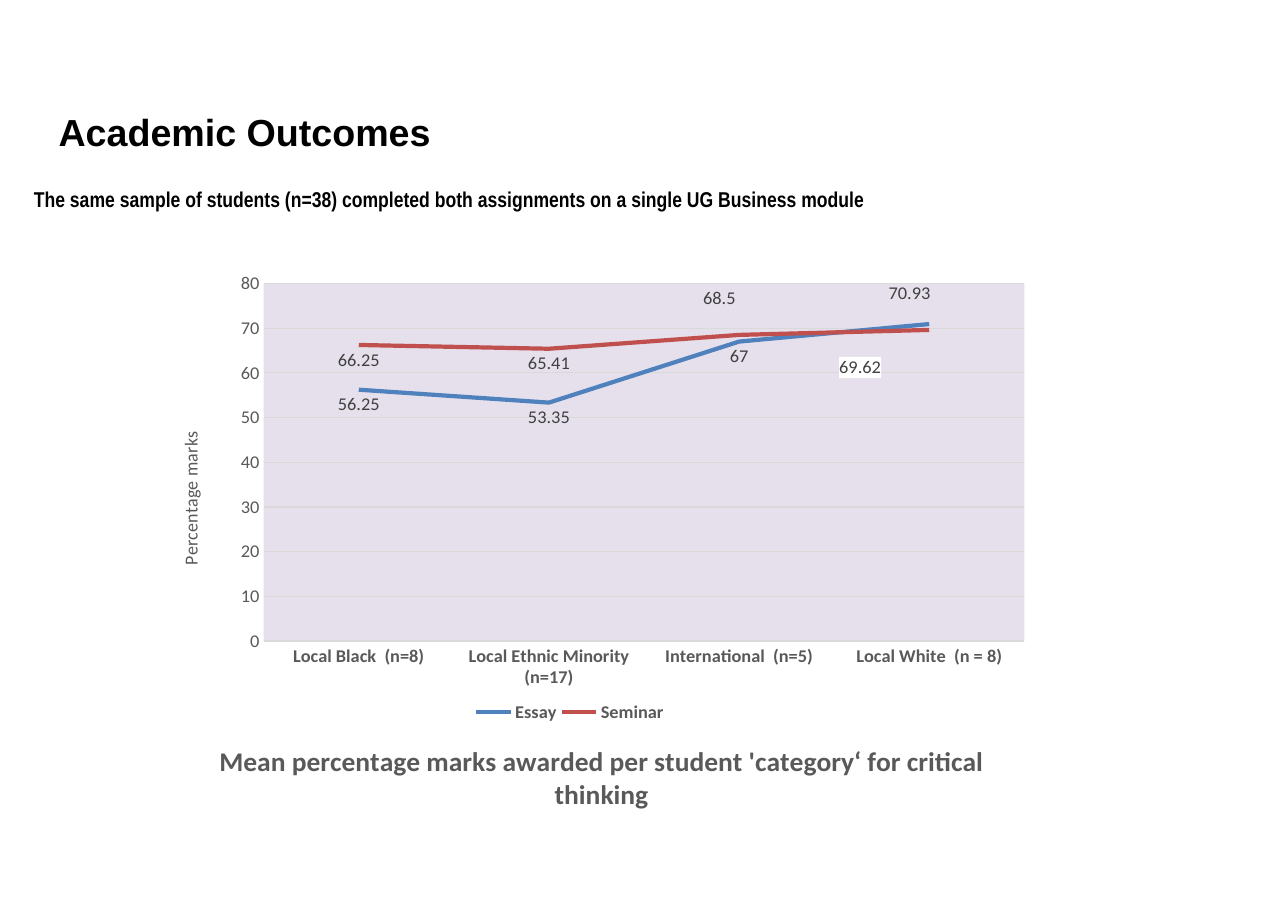
"""Build the Academic Outcomes slide with a line chart of essay and seminar marks."""
from lxml import etree
from pptx import Presentation
from pptx.chart.data import CategoryChartData
from pptx.dml.color import RGBColor
from pptx.enum.chart import XL_CHART_TYPE, XL_LABEL_POSITION, XL_LEGEND_POSITION, XL_TICK_MARK
from pptx.enum.text import MSO_ANCHOR, MSO_AUTO_SIZE, PP_ALIGN
from pptx.oxml.ns import qn
from pptx.util import Cm, Pt

LINE = XL_CHART_TYPE.LINE
BELOW = XL_LABEL_POSITION.BELOW
BOTTOM = XL_LEGEND_POSITION.BOTTOM
NO_TICK = XL_TICK_MARK.NONE
TOP = MSO_ANCHOR.TOP
NO_FIT = MSO_AUTO_SIZE.NONE
LEFT = PP_ALIGN.LEFT

COLORS = {
    "black": "000000", "text": "595959", "label": "404040", "grid": "D9D9D9",
    "plot": "E6E0EC", "Essay": "4F81BD", "Seminar": "C0504D", "white": "FFFFFF",
}


def style(font, size, color, bold=False, name="Calibri"):
    values = {"name": name, "size": Pt(size), "bold": bold}
    for attribute, value in values.items():
        setattr(font, attribute, value)
    font.color.rgb = RGBColor.from_string(COLORS[color])


def place(element, index, **values):
    for old_layout in element.findall(qn("c:layout")):
        element.remove(old_layout)
    layout = etree.Element(qn("c:layout"))
    manual = etree.SubElement(layout, qn("c:manualLayout"))
    for tag, value in values.items():
        etree.SubElement(manual, qn(f"c:{tag}")).set("val", str(value))
    element.insert(index, layout)


presentation = Presentation()
presentation.slide_width = Cm(29.7)
presentation.slide_height = Cm(21)
slide = presentation.slides.add_slide(presentation.slide_layouts[1])

headings = [
    (slide.shapes.title, "Academic Outcomes", (1.07, 2.36, 28.63, 1.78), 24.6, "Arial"),
    (slide.placeholders[1],
     "The same sample of students (n=38) completed both assignments on a single UG Business module",
     (0.5, 4.14, 28.42, 1.32), 14, "Arial Narrow"),
]
frame_format = {
    "margin_left": Cm(0.28), "margin_right": Cm(0.28),
    "margin_top": Cm(0.15), "margin_bottom": Cm(0.15),
    "vertical_anchor": TOP, "auto_size": NO_FIT, "word_wrap": True,
}
for shape, text, box, size, font_name in headings:
    shape.left, shape.top, shape.width, shape.height = map(Cm, box)
    for attribute, value in frame_format.items():
        setattr(shape.text_frame, attribute, value)
    paragraph = shape.text_frame.paragraphs[0]
    paragraph.alignment = LEFT
    paragraph.space_before = Pt(2)
    run = paragraph.add_run()
    run.text = text
    style(run.font, size, "black", True, font_name)
    properties = paragraph._p.get_or_add_pPr()
    properties.set("marL", "0")
    properties.set("indent", "0")
    etree.SubElement(properties, qn("a:buNone"))

data = CategoryChartData()
data.categories = [
    "Local Black  (n=8)", "Local Ethnic Minority (n=17)",
    "International  (n=5)", "Local White  (n = 8)",
]
data.add_series("Essay", (56.25, 53.35, 67, 70.93))
data.add_series("Seminar", (66.25, 65.41, 68.5, 69.62))
chart = slide.shapes.add_chart(LINE, Cm(3.12), Cm(5.49), Cm(22.78), Cm(13.39), data).chart
chart.has_title = False
style(chart.font, 10, "black")

plot_area = chart._chartSpace.chart.plotArea
place(plot_area, 0, layoutTarget="inner", xMode="edge", yMode="edge",
      x=0.13, y=0.08, w=0.77, h=0.63)
plot_fill = etree.SubElement(etree.SubElement(plot_area, qn("c:spPr")), qn("a:solidFill"))
etree.SubElement(plot_fill, qn("a:srgbClr")).set("val", COLORS["plot"])

category_axis, value_axis = chart.category_axis, chart.value_axis
axes = [
    (category_axis, "Mean percentage marks awarded per student 'category‘ for critical thinking",
     18, True, 0.08, 0.88),
    (value_axis, "Percentage marks", 12, False, 0.04, 0.34),
]
for axis, text, size, bold, x, y in axes:
    axis.major_tick_mark = axis.minor_tick_mark = NO_TICK
    style(axis.tick_labels.font, 12, "text", axis is category_axis)
    title_frame = axis.axis_title.text_frame
    run = title_frame.paragraphs[0].add_run()
    run.text = text
    style(run.font, size, "text", bold)
    place(axis.axis_title._element, 1, xMode="edge", yMode="edge", x=x, y=y)
title_frame._txBody.bodyPr.set("rot", "-5400000")
title_frame._txBody.bodyPr.set("vert", "horz")

value_axis.minimum_scale, value_axis.maximum_scale, value_axis.major_unit = 0, 80, 10
value_axis.format.line.fill.background()
for line, width in ((category_axis.format.line, 1), (value_axis.major_gridlines.format.line, 0.75)):
    line.width = Pt(width)
    line.color.rgb = RGBColor.from_string(COLORS["grid"])

moved_labels = {
    "Essay": {3: (-0.02, -0.08)},
    "Seminar": {2: (-0.02, -0.09), 3: (-0.07, 0.04)},
}
for series in chart.plots[0].series:
    series.smooth = False
    series.format.line.width = Pt(2.75)
    series.format.line.color.rgb = RGBColor.from_string(COLORS[series.name])
    labels = series.data_labels
    labels.show_value = True
    labels.position = BELOW
    style(labels.font, 12, "label")
    for leader_lines in labels._element.findall(qn("c:showLeaderLines")):
        leader_lines.set("val", "0")
    for point, (x, y) in moved_labels[series.name].items():
        label = series.points[point].data_label
        label.position = BELOW
        style(label.font, 12, "label")
        label_element = labels._element.xpath(f"c:dLbl[c:idx/@val='{point}']")[0]
        for old_properties in label_element.findall(qn("c:spPr")):
            label_element.remove(old_properties)
        place(label_element, 1, x=x, y=y)
        if (series.name, point) == ("Seminar", 3):
            label_properties = etree.Element(qn("c:spPr"))
            label_fill = etree.SubElement(label_properties, qn("a:solidFill"))
            etree.SubElement(label_fill, qn("a:srgbClr")).set("val", COLORS["white"])
            label_element.insert(2, label_properties)

chart.has_legend = True
chart.legend.position = BOTTOM
chart.legend.include_in_layout = False
style(chart.legend.font, 12, "text", True)
place(chart.legend._element, 1, xMode="edge", yMode="edge", x=0.34, y=0.81, w=0.2, h=0.05)

presentation.save("out.pptx")
